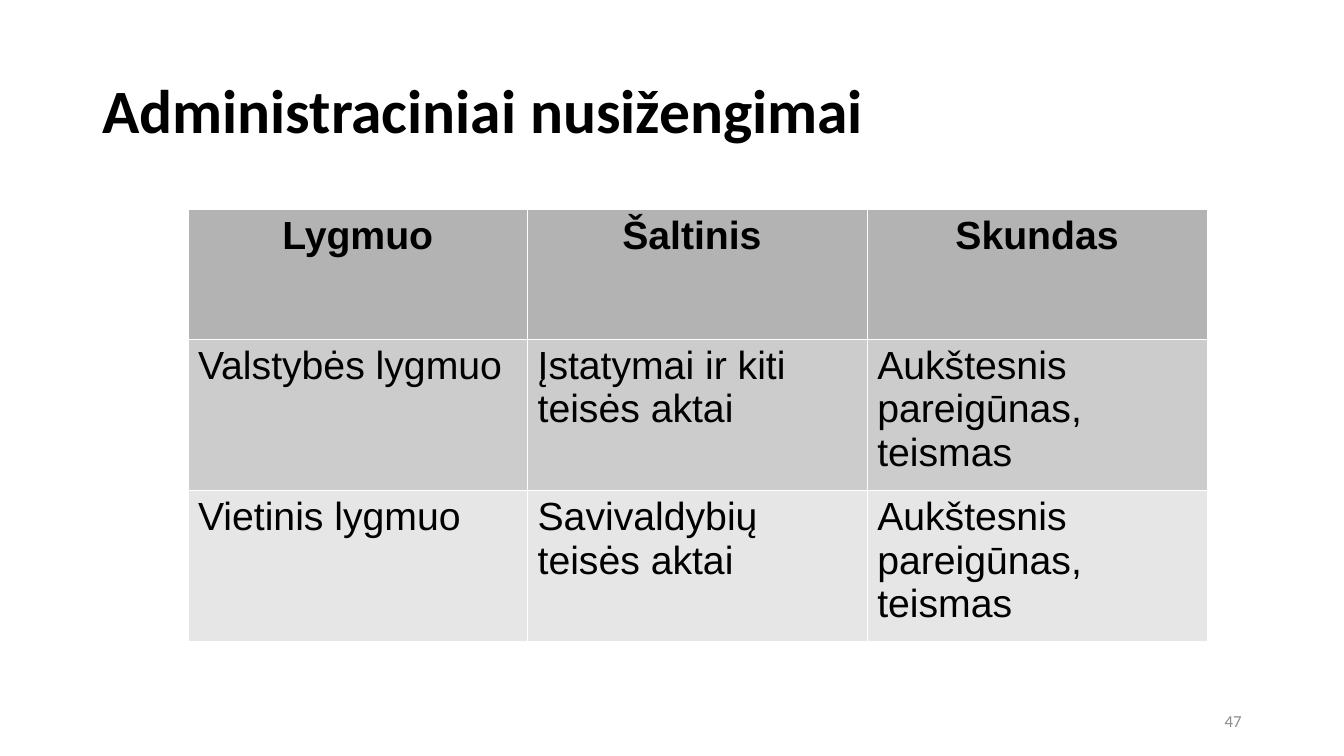
from lxml.etree import SubElement
from pptx import Presentation
from pptx.dml.color import RGBColor
from pptx.enum.text import MSO_ANCHOR as Anchor, PP_ALIGN as Align
from pptx.oxml.ns import qn
from pptx.util import Pt

BLACK = RGBColor(0x00, 0x00, 0x00)
WHITE = RGBColor(0xFF, 0xFF, 0xFF)
NUMBER_GRAY = RGBColor(0x8B, 0x8B, 0x8B)
ROW_FILLS = [
    RGBColor(0xB3, 0xB3, 0xB3),
    RGBColor(0xCC, 0xCC, 0xCC),
    RGBColor(0xE6, 0xE6, 0xE6),
]

ROWS = [
    ["Lygmuo", "Šaltinis ", "Skundas"],
    ["Valstybės lygmuo", "Įstatymai ir kiti teisės aktai", "Aukštesnis pareigūnas, teismas"],
    ["Vietinis lygmuo", "Savivaldybių teisės aktai", "Aukštesnis pareigūnas, teismas"],
]


class SlideBuilder:
    heading_font = "Calibri"
    table_font = "Arial"
    table_size = 28
    border_width = 0.06

    def __init__(self, slide):
        self.slide = slide

    def set_text(self, text_frame, text, font, size, color, bold=False, align=Align.LEFT):
        text_frame.text = text
        paragraph = text_frame.paragraphs[0]
        paragraph.alignment = align
        style = paragraph.runs[0].font
        style.name, style.size, style.bold = font, Pt(size), bold
        style.color.rgb = color
        return paragraph

    def text_box(self, left, top, width, height, text, size, color, **style):
        shape = self.slide.shapes.add_textbox(Pt(left), Pt(top), Pt(width), Pt(height))
        text_frame = shape.text_frame
        text_frame.word_wrap = True
        text_frame.vertical_anchor = Anchor.MIDDLE
        return self.set_text(text_frame, text, self.heading_font, size, color, **style)

    def border(self, cell):
        properties = cell._tc.get_or_add_tcPr()
        # Borders come before the fill in the cell properties
        for index, side in enumerate(("a:lnL", "a:lnR", "a:lnT", "a:lnB")):
            line = SubElement(properties, qn(side), w=str(Pt(self.border_width)))
            fill = SubElement(line, qn("a:solidFill"))
            SubElement(fill, qn("a:srgbClr"), val=str(WHITE))
            properties.insert(index, line)

    def table(self, left, top, column_width, row_height, rows, fills):
        row_count, column_count = len(rows), len(rows[0])
        frame = self.slide.shapes.add_table(
            row_count, column_count, Pt(left), Pt(top),
            Pt(column_width * column_count), Pt(row_height * row_count))
        table = frame.table
        table.horz_banding = False
        for column in table.columns:
            column.width = Pt(column_width)
        for row_index, (texts, fill) in enumerate(zip(rows, fills)):
            table.rows[row_index].height = Pt(row_height)
            header = row_index == 0
            for column_index, text in enumerate(texts):
                cell = table.cell(row_index, column_index)
                cell.fill.solid()
                cell.fill.fore_color.rgb = fill
                self.border(cell)
                self.set_text(cell.text_frame, text, self.table_font, self.table_size, BLACK,
                              bold=header, align=Align.CENTER if header else Align.LEFT)


def main():
    presentation = Presentation()
    presentation.slide_width, presentation.slide_height = Pt(960), Pt(540)
    builder = SlideBuilder(presentation.slides.add_slide(presentation.slide_layouts[6]))

    # Title
    title = builder.text_box(66, 28.75, 828, 104.4, "Administraciniai nusižengimai",
                             44, BLACK, bold=True)
    title.line_spacing = 0.9

    # Slide number
    builder.text_box(678, 500.5, 216, 28.75, "47", 12, NUMBER_GRAY, align=Align.RIGHT)

    # Levels, sources and appeals
    builder.table(134.25, 149, 242.6, 92.9, ROWS, ROW_FILLS)

    presentation.save("out.pptx")


if __name__ == "__main__":
    main()
